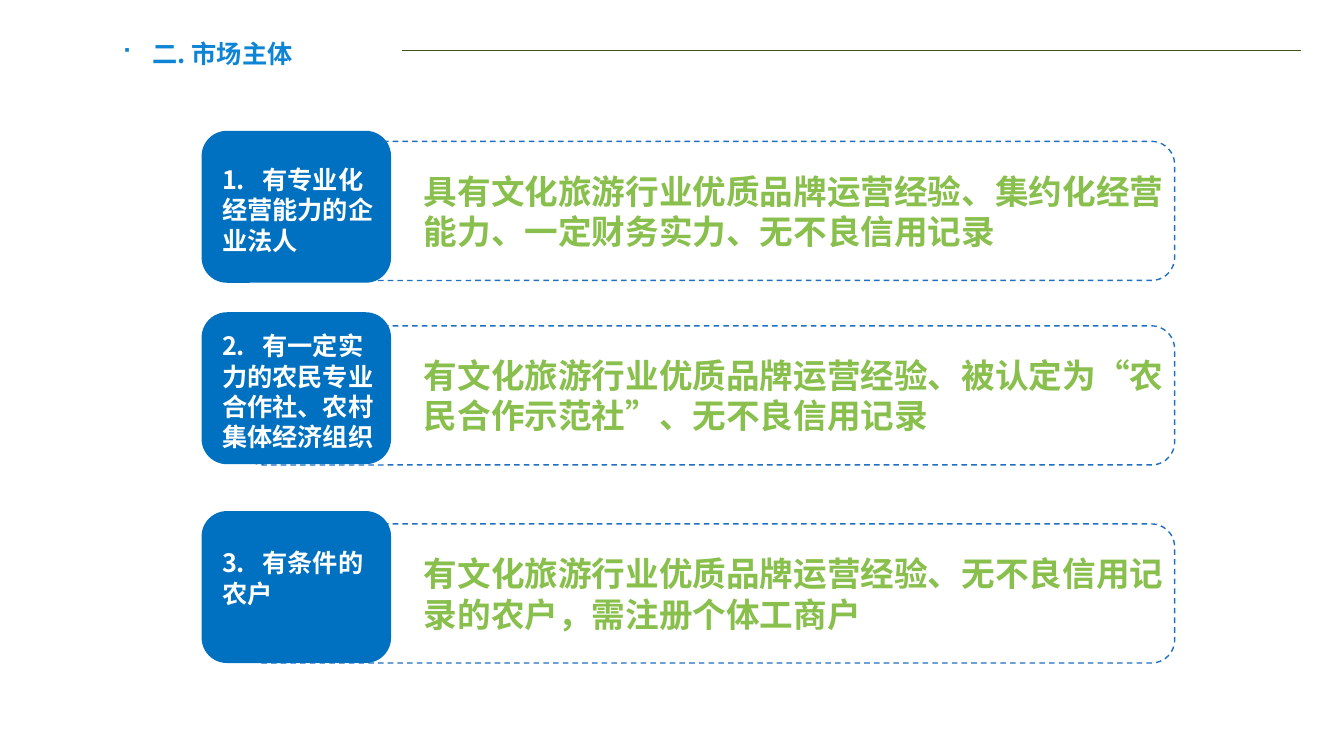
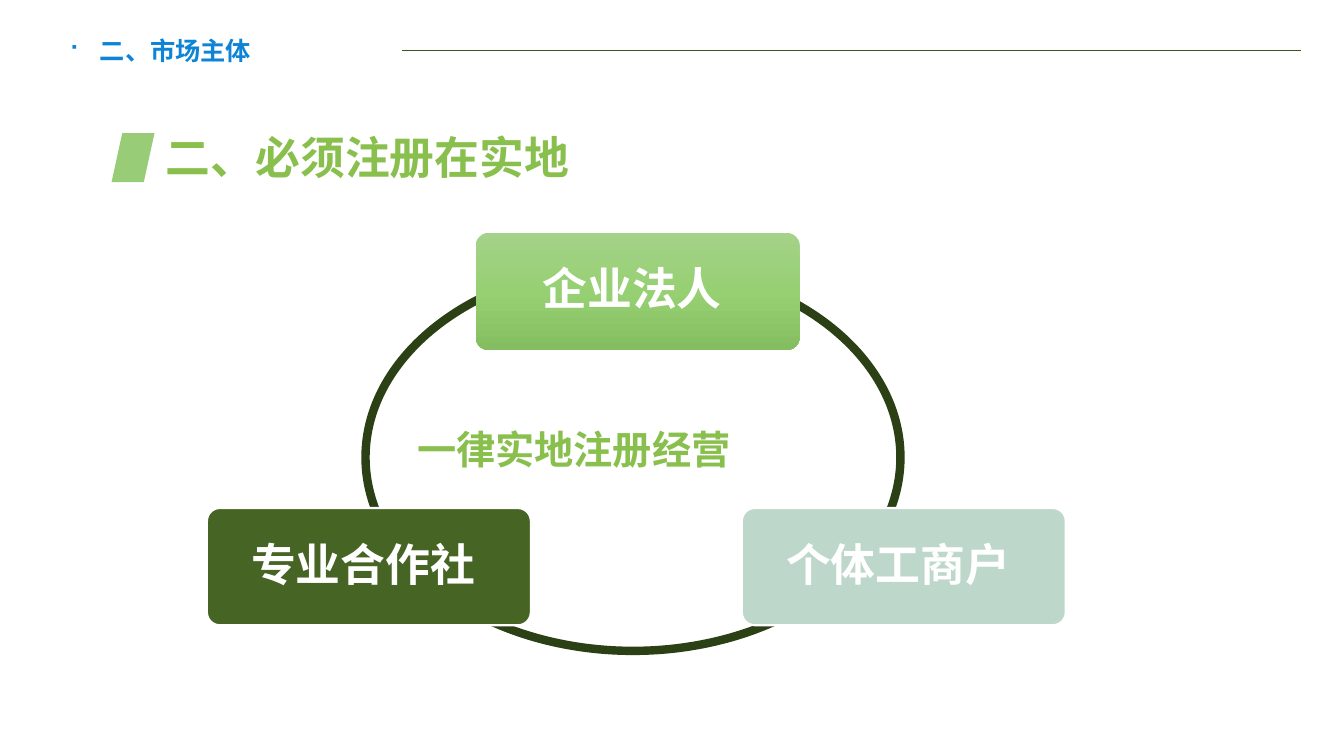
import copy

import pptx
import pptx.dml.color
import pptx.enum.dml
import pptx.enum.shapes
import pptx.enum.text
import pptx.oxml.ns
import pptx.util
from lxml import etree

RGB = pptx.dml.color.RGBColor
SHAPE = pptx.enum.shapes.MSO_SHAPE
ALIGN = pptx.enum.text.PP_ALIGN
ANCHOR = pptx.enum.text.MSO_ANCHOR
qn = pptx.oxml.ns.qn
Inches = pptx.util.Inches
Pt = pptx.util.Pt

FONT = "Noto Sans CJK SC"
WIDTH, HEIGHT = Inches(13.33), Inches(7.5)
TITLE_BLUE = RGB(0x0D, 0x84, 0xD5)
CARD_BLUE = RGB(0x00, 0x70, 0xC0)
FRAME_BLUE = RGB(0x20, 0x70, 0xC1)
TEXT_GREEN = RGB(0x89, 0xBF, 0x4C)
RULE_GREEN = RGB(0x3B, 0x56, 0x1D)
RING_GREEN = RGB(0x2C, 0x40, 0x15)
MARK_GREEN = RGB(0x98, 0xCC, 0x77)
DEEP_GREEN = RGB(0x46, 0x64, 0x24)
PALE_GREEN = RGB(0xBE, 0xD7, 0xCB)
NODE_STOPS = ((0, RGB(0xA4, 0xD2, 0x88)), (0.5, RGB(0x97, 0xD0, 0x73)),
              (1, RGB(0x85, 0xBE, 0x61)))
WHITE = RGB(0xFF, 0xFF, 0xFF)

SUBJECTS = (
    (17.3, 18.7, 0.26, "1.\t有专业化经营能力的企业法人",
     "具有文化旅游行业优质品牌运营经验、集约化经营能力、一定财务实力、无不良信用记录"),
    (41.3, 43.1, 0.11, "2.\t有一定实力的农民专业合作社、农村集体经济组织",
     "有文化旅游行业优质品牌运营经验、被认定为“农民合作示范社”、无不良信用记录"),
    (67.6, 69.3, 0.29, "3.\t有条件的农户",
     "有文化旅游行业优质品牌运营经验、无不良信用记录的农户，需注册个体工商户"),
)
NODES = (
    (35.4, 30.8, "企业法人", None),
    (55.2, 67.2, "个体工商户", PALE_GREEN),
    (15.4, 67.2, "专业合作社", DEEP_GREEN),
)


def box(left, top, width, height):
    """Turn percentages of the slide into a position and size."""
    return (int(WIDTH * left / 100), int(HEIGHT * top / 100),
            int(WIDTH * width / 100), int(HEIGHT * height / 100))


def write(tf, text, size, color, align=ALIGN.LEFT, anchor=ANCHOR.TOP,
          insets=(0.1, 0.05, 0.1, 0.05)):
    """Write one bold paragraph into a text frame and return it."""
    tf.word_wrap = True
    tf.auto_size = pptx.enum.text.MSO_AUTO_SIZE.NONE
    tf.vertical_anchor = anchor
    (tf.margin_left, tf.margin_top,
     tf.margin_right, tf.margin_bottom) = map(Inches, insets)
    p = tf.paragraphs[0]
    p.alignment = align
    r = p.add_run()
    r.text = text
    r.font.size, r.font.bold, r.font.name = Pt(size), True, FONT
    r.font.color.rgb = color
    etree.SubElement(r.font._element, qn("a:ea"), typeface=FONT)
    return p


def add_shape(s, kind, place, fill=None, line=None, weight=1):
    """Add a flat preset shape with an optional fill and outline."""
    sp = s.shapes.add_shape(kind, *box(*place))
    sp.shadow.inherit = False
    if fill is None:
        sp.fill.background()
    else:
        sp.fill.solid()
        sp.fill.fore_color.rgb = fill
    if line is None:
        sp.line.fill.background()
    else:
        sp.line.color.rgb = line
        sp.line.width = Pt(weight)
    return sp


def add_label(s, place, text, size):
    """Add a green text box."""
    write(s.shapes.add_textbox(*box(*place)).text_frame, text, size, TEXT_GREEN)


def add_slide(prs, title, place):
    """Add a title-only slide with a bulleted title and the header rule."""
    s = prs.slides.add_slide(prs.slide_layouts[5])
    sp = s.shapes.title
    sp.left, sp.top, sp.width, sp.height = box(*place)
    p = write(sp.text_frame, title, 18, TITLE_BLUE, ALIGN.CENTER)
    pPr = p._p.get_or_add_pPr()
    pPr.set("marL", str(Inches(0.31)))
    pPr.set("indent", str(-Inches(0.31)))
    etree.SubElement(pPr, qn("a:buFont"), typeface="Wingdings")
    etree.SubElement(pPr, qn("a:buChar"), char="■")
    x, y, length, _ = box(29.9, 6.7, 66.9, 0)
    rule = s.shapes.add_connector(
        pptx.enum.shapes.MSO_CONNECTOR.STRAIGHT, x, y, x + length, y)
    rule.line.color.rgb = RULE_GREEN
    rule.line.width = Pt(0.5)
    etree.SubElement(rule._element.spPr, qn("a:effectLst"))
    return s


def add_subject(s, card_top, frame_top, inset, name, terms):
    """Add a dashed frame of terms with a named card over its left end."""
    frame = add_shape(s, SHAPE.ROUNDED_RECTANGLE,
                      (17.9, frame_top, 69.5, 18.4), WHITE, FRAME_BLUE)
    frame.line.dash_style = pptx.enum.dml.MSO_LINE.DASH
    write(frame.text_frame, terms, 24, TEXT_GREEN, anchor=ANCHOR.MIDDLE,
          insets=(1.75, 0, 0.02, 0))
    card = add_shape(s, SHAPE.ROUNDED_RECTANGLE,
                     (15, card_top, 14.1, 20.1), CARD_BLUE)
    p = write(card.text_frame, name, 18, WHITE, insets=(0.13, inset, 0.06, 0))
    tabs = etree.SubElement(p._p.get_or_add_pPr(), qn("a:tabLst"))
    etree.SubElement(tabs, qn("a:tab"), pos=str(Inches(0.4)), algn="l")


def fill_gradient(sp, stops):
    """Fill a shape from top to bottom through three colours."""
    sp.fill.gradient()
    sp.fill.gradient_angle = 270
    gs_list = sp._element.spPr.find(qn("a:gradFill")).find(qn("a:gsLst"))
    gs_list.append(copy.deepcopy(gs_list[0]))
    for stop, (position, color) in zip(sp.fill.gradient_stops, stops):
        stop.position = position
        stop.color.rgb = color


def add_node(s, left, top, text, fill):
    """Add a rounded node; without a fill colour it gets the gradient."""
    sp = add_shape(s, SHAPE.ROUNDED_RECTANGLE, (left, top, 24.1, 15.5),
                   fill, WHITE if fill else None, 1.5)
    sp.adjustments[0] = 0.11
    if fill is None:
        fill_gradient(sp, NODE_STOPS)
    p = write(sp.text_frame, text, 32, WHITE, ALIGN.CENTER, ANCHOR.MIDDLE,
              (0.19, 0.19, 0.3, 0.19))
    p.line_spacing = 0.9


def build_subjects(prs):
    """Build the slide on the three kinds of market subject."""
    s = add_slide(prs, "二. 市场主体", (8.25, 4.4, 14.3, 5.3))
    for subject in SUBJECTS:
        add_subject(s, *subject)


def build_registration(prs):
    """Build the slide on registering locally."""
    s = add_slide(prs, "二、市场主体", (4.2, 4, 15.4, 5.3))
    add_shape(s, SHAPE.OVAL, (27.2, 34.9, 39.8, 51.2), line=RING_GREEN, weight=6)
    for node in NODES:
        add_node(s, *node)
    add_label(s, (30.3, 55.6, 34.4, 7.6), "一律实地注册经营", 28)
    add_label(s, (11.6, 16.5, 85.8, 8.5), "二、必须注册在实地", 32)
    add_shape(s, SHAPE.PARALLELOGRAM, (8.3, 17.6, 3.2, 6.5), MARK_GREEN)


def main():
    """Build and save the presentation."""
    prs = pptx.Presentation()
    prs.slide_width, prs.slide_height = WIDTH, HEIGHT
    build_subjects(prs)
    build_registration(prs)
    prs.save("out.pptx")


if __name__ == "__main__":
    main()
